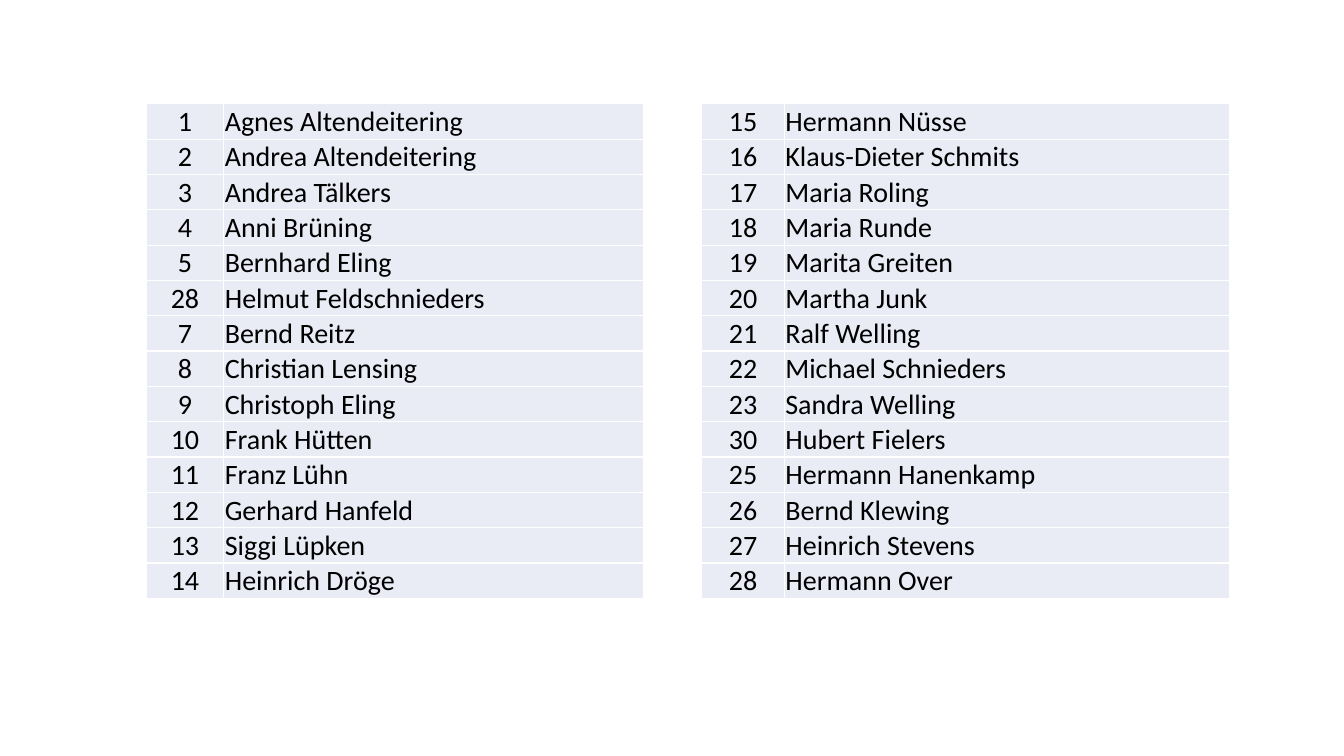
import pptx
import pptx.chart.data
import pptx.dml.color
import pptx.enum.text
import pptx.oxml
import pptx.oxml.ns
import pptx.util

Inches = pptx.util.Inches
RGBColor = pptx.dml.color.RGBColor
ALIGN = pptx.enum.text.PP_ALIGN

BLACK = RGBColor(0x00, 0x00, 0x00)
WHITE = RGBColor(0xFF, 0xFF, 0xFF)
PALE = RGBColor(0xE9, 0xEB, 0xF5)

TOP = 1.03
ROW = 0.34
FONT = {"name": "Calibri", "size": pptx.util.Pt(20), "bold": False}
CELL = {
    "margin_left": Inches(0.01),
    "margin_top": Inches(0.01),
    "margin_right": Inches(0.01),
    "margin_bottom": 0,
    "vertical_anchor": pptx.enum.text.MSO_ANCHOR.MIDDLE,
}

# Each list: left edge, column widths, numbered names
LISTS = [
    (1.45, (0.77, 4.16), [
        (1, "Agnes Altendeitering"),
        (2, "Andrea Altendeitering"),
        (3, "Andrea Tälkers"),
        (4, "Anni Brüning"),
        (5, "Bernhard Eling"),
        (28, "Helmut Feldschnieders"),
        (7, "Bernd Reitz"),
        (8, "Christian Lensing"),
        (9, "Christoph Eling"),
        (10, "Frank Hütten"),
        (11, "Franz Lühn"),
        (12, "Gerhard Hanfeld"),
        (13, "Siggi Lüpken"),
        (14, "Heinrich Dröge"),
    ]),
    (6.96, (0.82, 4.42), [
        (15, "Hermann Nüsse"),
        (16, "Klaus-Dieter Schmits"),
        (17, "Maria Roling"),
        (18, "Maria Runde"),
        (19, "Marita Greiten"),
        (20, "Martha Junk"),
        (21, "Ralf Welling"),
        (22, "Michael Schnieders"),
        (23, "Sandra Welling"),
        (30, "Hubert Fielers"),
        (25, "Hermann Hanenkamp"),
        (26, "Bernd Klewing"),
        (27, "Heinrich Stevens"),
        (28, "Hermann Over"),
    ]),
]


def set_edges(cell):
    """Draw a white one-point line on all four sides of the cell."""
    props = cell._tc.get_or_add_tcPr()
    for side in ("lnL", "lnR", "lnT", "lnB"):
        props.append(pptx.oxml.parse_xml(
            f'<a:{side} {pptx.oxml.ns.nsdecls("a")} w="12700"><a:solidFill>'
            f'<a:srgbClr val="{WHITE}"/></a:solidFill></a:{side}>'))


deck = pptx.Presentation()
deck.slide_width = Inches(13.33)
deck.slide_height = Inches(7.5)
slide = deck.slides.add_slide(deck.slide_layouts[6])

for left, widths, people in LISTS:
    count = len(people)
    table = slide.shapes.add_table(
        count, 2, Inches(left), Inches(TOP),
        Inches(sum(widths)), Inches(ROW * count)).table
    table.first_row = False
    table.horz_banding = False
    for column, width in zip(table.columns, widths):
        column.width = Inches(width)
    for row, person in zip(table.rows, people):
        row.height = Inches(ROW)
        for cell, value, align in zip(row.cells, person, (ALIGN.CENTER, ALIGN.LEFT)):
            for key, setting in CELL.items():
                setattr(cell, key, setting)
            set_edges(cell)
            cell.fill.solid()
            cell.fill.fore_color.rgb = PALE
            para = cell.text_frame.paragraphs[0]
            para.alignment = align
            run = para.add_run()
            run.text = str(value)
            for key, setting in FONT.items():
                setattr(run.font, key, setting)
            run.font.color.rgb = BLACK

deck.save("out.pptx")
